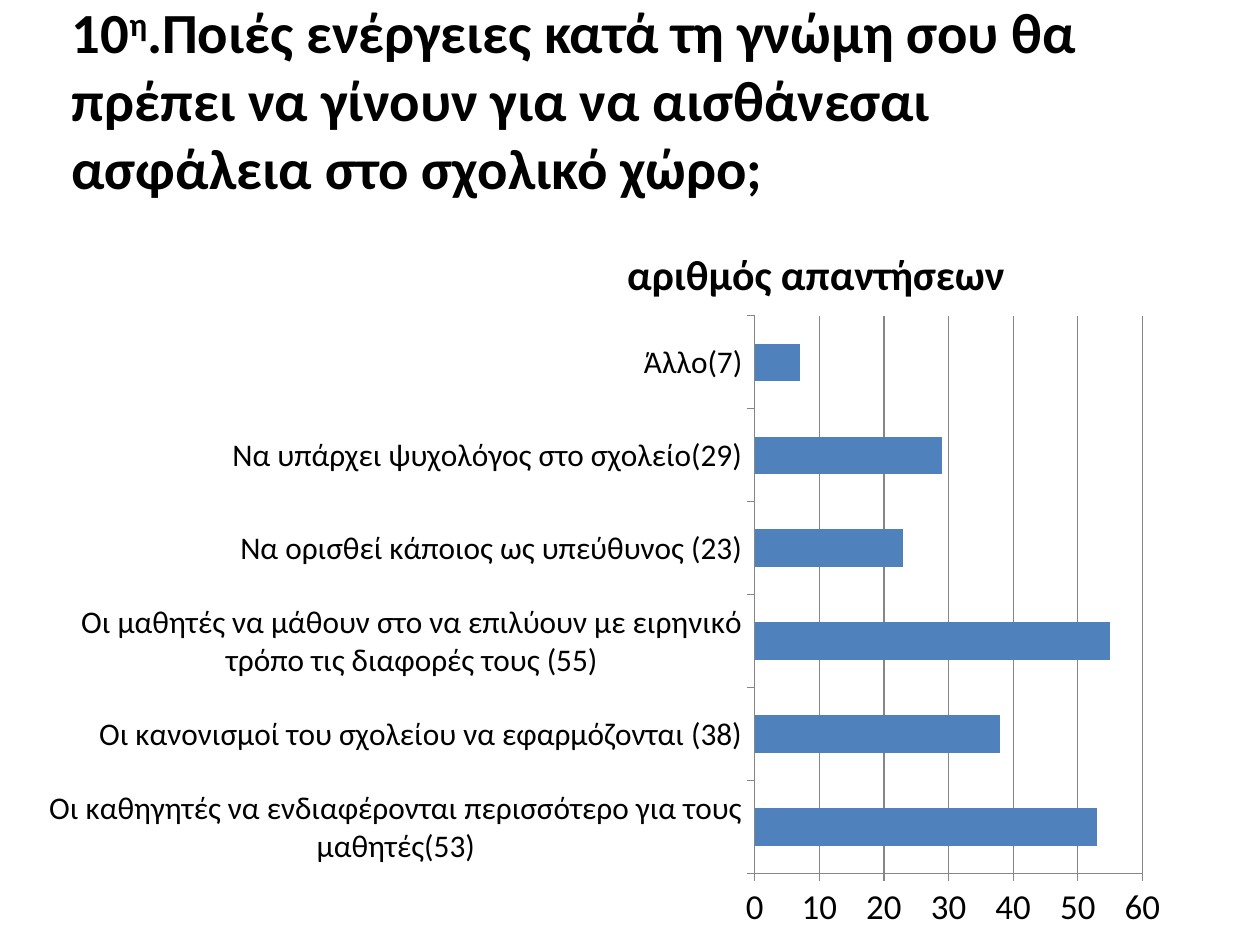
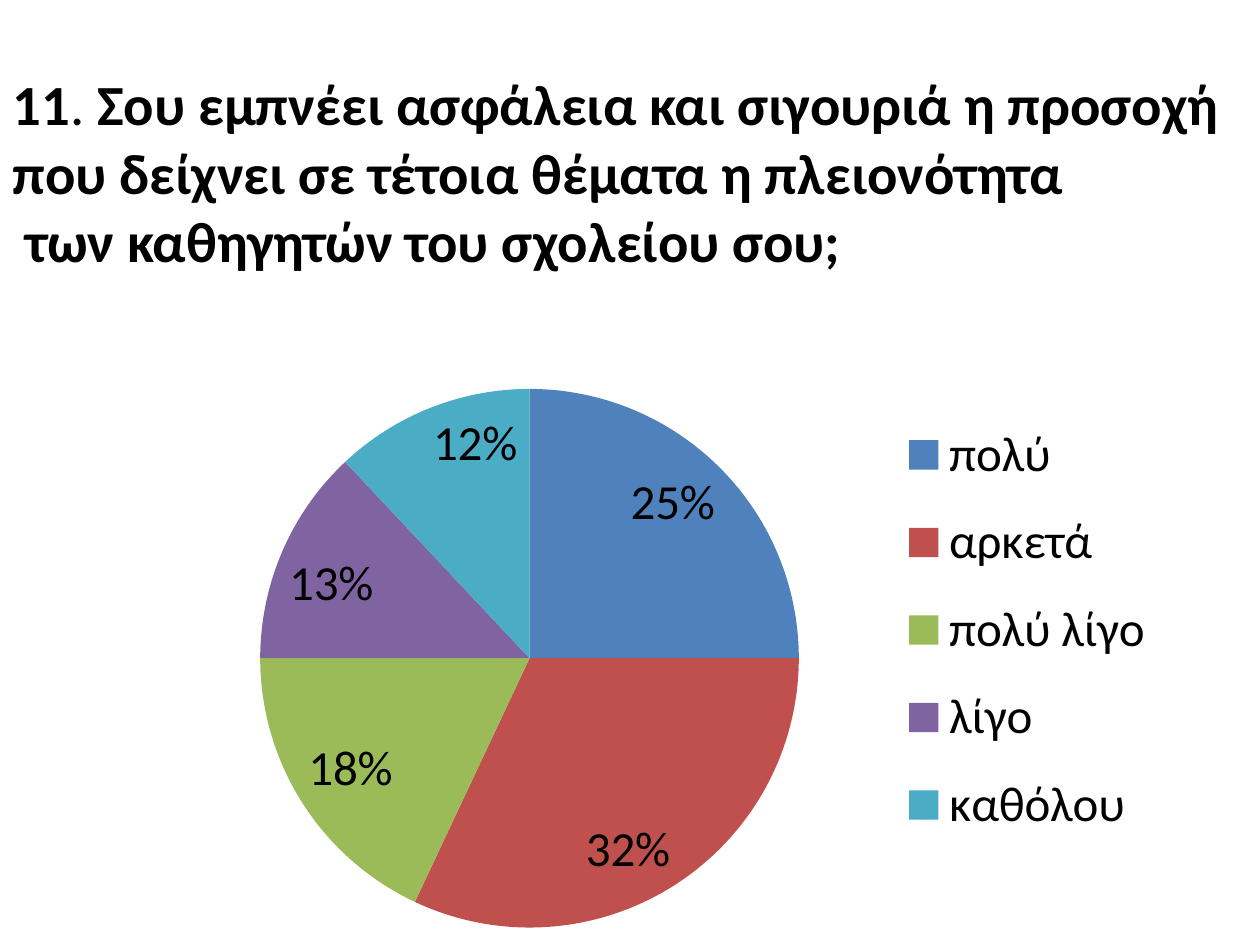
from dataclasses import dataclass

import lxml.etree
import pptx
import pptx.chart.data
import pptx.dml.color
import pptx.enum.chart
import pptx.enum.text
import pptx.oxml.ns
import pptx.util

# Shared style and grid
FONT = "Calibri"
BLACK, GRID_GREY = "000000", "868686"
PALETTE = ["4F81BD", "C0504D", "9BBB59", "8064A2", "4BACC6"]
TITLE_SIZE = 32.4
SLIDE_W, SLIDE_H = pptx.util.Inches(10), pptx.util.Inches(7.5)
COLUMNS, ROWS = 100, 75


@dataclass(frozen=True)
class Frame:
    """A place on the slide, in columns and rows."""
    col: float
    row: float
    cols: float
    rows: float

    def box(self) -> tuple[int, int, int, int]:
        col_w, row_h = SLIDE_W / COLUMNS, SLIDE_H / ROWS
        return (round(self.col * col_w), round(self.row * row_h),
                round(self.cols * col_w), round(self.rows * row_h))


@dataclass(frozen=True)
class Piece:
    """A stretch of title text with one format."""
    text: str
    bold: bool = True
    raised: bool = False
    break_after: bool = False


@dataclass(frozen=True)
class Question:
    title_frame: Frame
    title: list[Piece]
    chart_frame: Frame
    chart_type: int
    answers: dict[str, float]
    number_format: str = "General"


def rgb(color: str) -> pptx.dml.color.RGBColor:
    return pptx.dml.color.RGBColor.from_string(color)


def style_font(font, size: float, bold: bool = False, color: str = BLACK) -> None:
    font.name, font.size, font.bold = FONT, pptx.util.Pt(size), bold
    font.color.rgb = rgb(color)


def add_text(p, text: str, *, size: float, bold: bool = False,
             raised: bool = False) -> None:
    r = p.add_run()
    r.text = text
    style_font(r.font, size, bold)
    if raised:
        r._r.get_or_add_rPr().set("baseline", "30000")


def place(element, position: int, inner: bool = False, **shares: float) -> None:
    """Fix a chart part at shares (x, y, w, h) of the chart's size."""
    qn = pptx.oxml.ns.qn
    layout = element.find(qn("c:layout"))
    if layout is not None:
        element.remove(layout)
    layout = lxml.etree.Element(qn("c:layout"))
    manual = lxml.etree.SubElement(layout, qn("c:manualLayout"))
    settings = {"layoutTarget": "inner"} if inner else {}
    settings |= {"xMode": "edge", "yMode": "edge"}
    settings |= {key: str(value) for key, value in shares.items()}
    for key, value in settings.items():
        lxml.etree.SubElement(manual, qn(f"c:{key}")).set("val", value)
    element.insert(position, layout)


def place_plot(chart, **shares: float) -> None:
    place(chart._chartSpace.chart.plotArea, 0, inner=True, **shares)


def add_title(s, frame: Frame, pieces: list[Piece]) -> None:
    sp = s.shapes.title
    sp.left, sp.top, sp.width, sp.height = frame.box()
    tf = sp.text_frame
    tf.word_wrap = True
    tf.auto_size = pptx.enum.text.MSO_AUTO_SIZE.NONE
    tf.vertical_anchor = pptx.enum.text.MSO_ANCHOR.MIDDLE
    p = tf.paragraphs[0]
    p.alignment = pptx.enum.text.PP_ALIGN.LEFT
    p.font.size = pptx.util.Pt(TITLE_SIZE)
    for piece in pieces:
        add_text(p, piece.text, size=TITLE_SIZE, bold=piece.bold,
                 raised=piece.raised)
        if piece.break_after:
            p.add_line_break()


def add_question(prs, question: Question):
    """Add a slide with its title and chart; return the chart."""
    s = prs.slides.add_slide(prs.slide_layouts[5])
    add_title(s, question.title_frame, question.title)
    data = pptx.chart.data.CategoryChartData(question.number_format)
    data.categories = list(question.answers)
    data.add_series("Series 1", list(question.answers.values()))
    chart = s.shapes.add_chart(question.chart_type, *question.chart_frame.box(),
                               data).chart
    style_font(chart.font, 10)
    return chart


def format_bars(chart) -> None:
    chart.has_legend = False
    chart.has_title = True
    add_text(chart.chart_title.text_frame.paragraphs[0], "αριθμός απαντήσεων",
             size=24, bold=True)
    chart.chart_title.include_in_layout = False
    place(chart.chart_title._element, 1, x=0.5, y=0.03)
    plot = chart.plots[0]
    plot.vary_by_categories, plot.gap_width = False, 150
    fill = plot.series[0].format.fill
    fill.solid()
    fill.fore_color.rgb = rgb(PALETTE[0])
    chart.value_axis.has_major_gridlines = True
    chart.value_axis.minimum_scale, chart.value_axis.maximum_scale = 0, 60
    chart.value_axis.major_unit = 10
    lines = [chart.value_axis.major_gridlines.format.line]
    for axis, size in ((chart.category_axis, 18), (chart.value_axis, 20)):
        style_font(axis.tick_labels.font, size)
        axis.major_tick_mark = pptx.enum.chart.XL_TICK_MARK.OUTSIDE
        lines.append(axis.format.line)
    for line in lines:
        line.color.rgb, line.width = rgb(GRID_GREY), pptx.util.Pt(0.75)
    place_plot(chart, x=0.62, y=0.136, w=0.344, h=0.766)


def format_pie(chart) -> None:
    chart.has_title = False
    chart.has_legend = True
    chart.legend.position = pptx.enum.chart.XL_LEGEND_POSITION.RIGHT
    chart.legend.include_in_layout = False
    style_font(chart.legend.font, 28)
    place(chart.legend._element, 1, x=0.71, y=0.13, w=0.28, h=0.74)
    plot = chart.plots[0]
    plot.vary_by_categories = True
    for index, color in enumerate(PALETTE):
        fill = plot.series[0].points[index].format.fill
        fill.solid()
        fill.fore_color.rgb = rgb(color)
    plot.has_data_labels = True
    labels = plot.data_labels
    labels.show_value, labels.show_percentage = True, False
    labels.number_format, labels.number_format_is_linked = "0%", False
    labels.position = pptx.enum.chart.XL_LABEL_POSITION.INSIDE_END
    style_font(labels.font, 28)
    place_plot(chart, x=0.174, y=0.117, w=0.475, h=0.856)


# Content
SAFETY_ACTIONS = Question(
    title_frame=Frame(4.7, 0, 90, 15.7),
    title=[Piece("10"), Piece("η", raised=True),
           Piece(".Ποιές ενέργειες κατά τη γνώμη σου θα πρέπει να γίνουν "
                 "για να αισθάνεσαι ασφάλεια στο σχολικό χώρο;")],
    chart_frame=Frame(3.9, 17.2, 90, 57.8),
    chart_type=pptx.enum.chart.XL_CHART_TYPE.BAR_CLUSTERED,
    answers={
        "Οι καθηγητές να ενδιαφέρονται περισσότερο για τους μαθητές(53)": 53,
        "Οι κανονισμοί του σχολείου να εφαρμόζονται (38)": 38,
        "Οι μαθητές να μάθουν στο να επιλύουν με ειρηνικό τρόπο "
        "τις διαφορές τους (55)": 55,
        "Να ορισθεί κάποιος ως υπεύθυνος (23)": 23,
        "Να υπάρχει ψυχολόγος στο σχολείο(29)": 29,
        "Άλλο(7)": 7,
    },
)
TEACHER_ATTENTION = Question(
    title_frame=Frame(0, 3, 100, 21.2),
    title=[Piece("11"), Piece(". ", bold=False),
           Piece("Σου εμπνέει ασφάλεια και σιγουριά η προσοχή που δείχνει "
                 "σε τέτοια θέματα η πλειονότητα", break_after=True),
           Piece(" των καθηγητών του σχολείου σου;")],
    chart_frame=Frame(5, 25, 90, 50),
    chart_type=pptx.enum.chart.XL_CHART_TYPE.PIE,
    answers={"πολύ": 0.25, "αρκετά": 0.32, "πολύ λίγο": 0.18,
             "λίγο": 0.13, "καθόλου": 0.12},
    number_format="0%",
)


def main() -> None:
    prs = pptx.Presentation()
    prs.slide_width, prs.slide_height = SLIDE_W, SLIDE_H
    format_bars(add_question(prs, SAFETY_ACTIONS))
    format_pie(add_question(prs, TEACHER_ATTENTION))
    prs.save("out.pptx")


if __name__ == "__main__":
    main()
